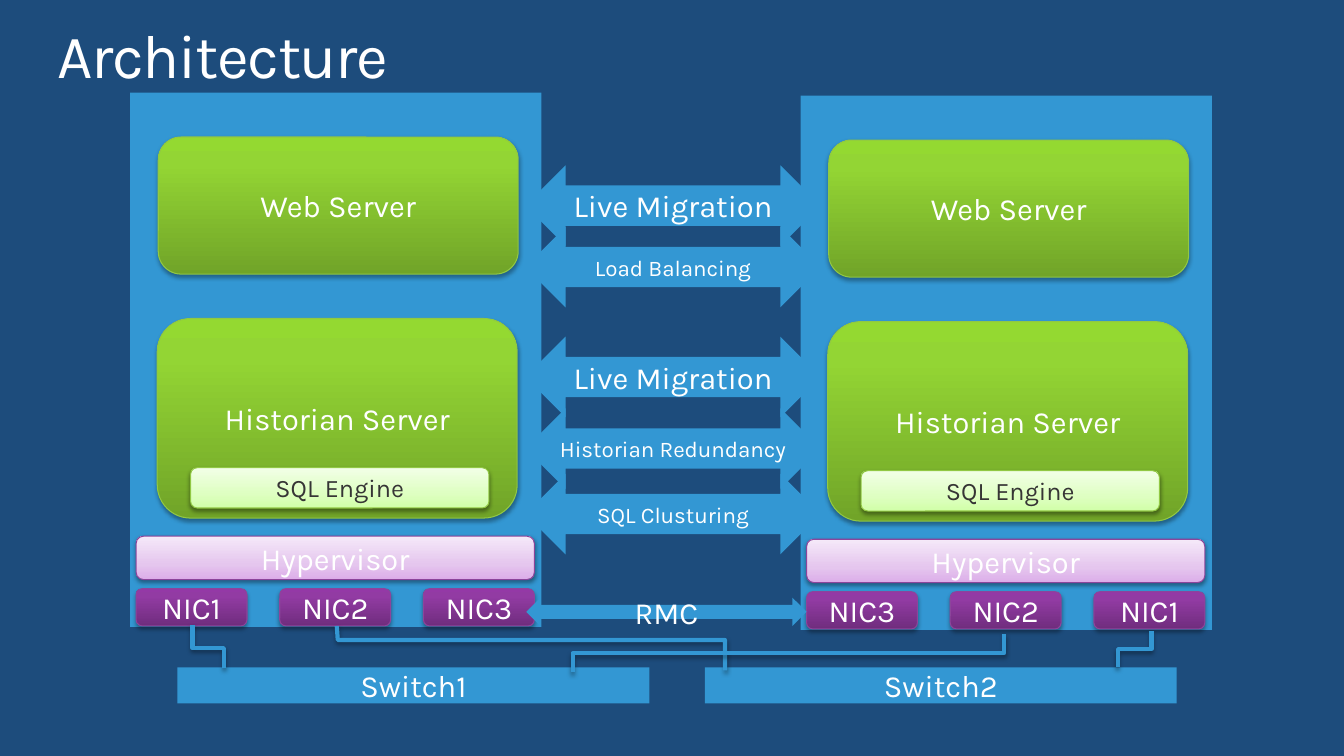
from dataclasses import dataclass

from pptx import Presentation
from pptx.dml.color import RGBColor
from pptx.enum.shapes import MSO_SHAPE as Preset
from pptx.enum.text import MSO_ANCHOR as Anchor, PP_ALIGN as Align
from pptx.oxml import parse_xml
from pptx.oxml.ns import nsdecls, qn
from pptx.util import Inches, Pt


@dataclass(frozen=True)
class Theme:
    font: str = "Karla"
    background: str = "1D4C7C"
    panel: str = "3397D3"
    white: str = "FFFFFF"
    dark: str = "363535"
    purple_line: str = "8C459B"
    green_line: str = "91C844"
    purple: tuple = ((0, "702D7E"), (80, "923BA3"), (100, "9439A6"))
    lilac: tuple = ((0, "DCADE9"), (35, "E5C6EE"), (100, "F5E9F9"))
    green: tuple = ((0, "71A428"), (80, "93D534"), (100, "94D931"))
    mint: tuple = ((0, "D1FFA8"), (35, "DEFFC1"), (100, "F2FFE7"))
    title_size: int = 44
    label_size: int = 22
    inner_size: int = 18
    small_size: int = 16


THEME = Theme()


def color(value):
    return RGBColor.from_string(value)


def write_text(shape, text, size=THEME.label_size, ink=THEME.white,
               align=Align.CENTER, anchor=Anchor.MIDDLE, margin=None,
               line_spacing=None, tracking=None):
    frame = shape.text_frame
    frame.word_wrap = True
    frame.vertical_anchor = anchor
    if margin is not None:
        frame.margin_left = frame.margin_right = Inches(margin)
        frame.margin_top = frame.margin_bottom = Inches(margin)
    para = frame.paragraphs[0]
    para.alignment = align
    if line_spacing:
        para.line_spacing = line_spacing
    span = para.add_run()
    span.text = text
    span.font.name = THEME.font
    span.font.size = Pt(size)
    span.font.color.rgb = color(ink)
    if tracking is not None:
        span.font._element.set("spc", str(tracking * 100))


def add_shadow(shape, opacity=35, distance=1.8):
    shape.shadow.inherit = False
    effects = shape.element.spPr.find(qn("a:effectLst"))
    effects.append(parse_xml(
        f'<a:outerShdw {nsdecls("a")} blurRad="{Pt(3.1)}" dist="{Pt(distance)}" '
        f'dir="5400000" rotWithShape="0"><a:srgbClr val="000000">'
        f'<a:alpha val="{opacity * 1000}"/></a:srgbClr></a:outerShdw>'))


def add_flat(page, preset, box, text=None, **text_format):
    shape = page.shapes.add_shape(preset, *map(Inches, box))
    shape.shadow.inherit = False
    shape.fill.solid()
    shape.fill.fore_color.rgb = color(THEME.panel)
    shape.line.fill.background()
    if text:
        write_text(shape, text, **text_format)


def add_glossy(page, box, text, stops, outline, shadow=(35, 1.8), **text_format):
    shape = page.shapes.add_shape(Preset.ROUNDED_RECTANGLE, *map(Inches, box))
    shape.fill.gradient()
    shape.fill.gradient_angle = 90
    stop_list = shape.element.spPr.find(qn("a:gradFill")).find(qn("a:gsLst"))
    for stop in list(stop_list):
        stop_list.remove(stop)
    for position, value in stops:
        stop_list.append(parse_xml(
            f'<a:gs {nsdecls("a")} pos="{position * 1000}">'
            f'<a:srgbClr val="{value}"/></a:gs>'))
    shape.line.color.rgb = color(outline)
    shape.line.width = Pt(0.75)
    add_shadow(shape, *shadow)
    write_text(shape, text, **text_format)


def add_title(page, box):
    title = page.shapes.add_textbox(*map(Inches, box))
    write_text(title, "Architecture", size=THEME.title_size, align=Align.LEFT,
               anchor=Anchor.TOP, margin=0, line_spacing=0.9, tracking=-1)


def add_host(page, box, cards):
    left, top, width, height = box
    add_flat(page, Preset.RECTANGLE, box)
    for index, card in enumerate(cards):
        add_glossy(page, (left + 0.06 + index * 1.425, top + 4.92, 1.1, 0.37),
                   card, THEME.purple, THEME.purple_line)
    add_glossy(page, (left + 0.06, top + 4.4, width - 0.13, 0.43), "Hypervisor",
               THEME.lilac, THEME.purple_line, shadow=(38, 1.6))
    add_glossy(page, (left + 0.27, top + 2.24, 3.57, 1.98), "Historian Server",
               THEME.green, THEME.green_line)
    add_glossy(page, (left + 0.6, top + 3.72, 2.96, 0.4), "SQL Engine",
               THEME.mint, THEME.green_line, shadow=(38, 1.6),
               size=THEME.inner_size, ink=THEME.dark)
    add_glossy(page, (left + 0.28, top + 0.44, 3.57, 1.36), "Web Server",
               THEME.green, THEME.green_line)


def add_switches(page, box):
    left, top, width, height = box
    switch_width = 4.68
    for index, name in enumerate(("Switch1", "Switch2")):
        add_flat(page, Preset.RECTANGLE,
                 (left + index * (width - switch_width), top, switch_width, height), name)


def add_links(page, box):
    left, top, width, height = box
    links = (
        (0, "Live Migration", THEME.label_size),
        (1.7, "Live Migration", THEME.label_size),
        (2.41, "Historian Redundancy", THEME.small_size),
        (3.06, "SQL Clusturing", THEME.small_size),
        (0.61, "Load Balancing", THEME.small_size),
    )
    for offset, text, size in links:
        add_flat(page, Preset.LEFT_RIGHT_ARROW, (left, top + offset, width, 0.8),
                 text, size=size)


def add_cables(page, box):
    left, top, width, height = box
    cables = (
        ((0, 0), (0, 0.23), (0.31, 0.23), (0.31, 0.43)),
        ((1.43, 0.01), (1.44, 0.15), (5.28, 0.15), (5.28, 0.45)),
        ((8.05, 0.09), (8.05, 0.28), (3.77, 0.28), (3.77, 0.47)),
        ((width, 0.06), (width, 0.24), (width - 0.33, 0.24), (width - 0.33, 0.42)),
    )
    for cable in cables:
        start, *bends = [(Inches(left + x), Inches(top + y)) for x, y in cable]
        builder = page.shapes.build_freeform(*start, scale=1.0)
        builder.add_line_segments(bends, close=False)
        wire = builder.convert_to_shape()
        wire.fill.background()
        wire.line.color.rgb = color(THEME.panel)
        wire.line.width = Pt(3)
        add_shadow(wire)


def main():
    deck = Presentation()
    deck.slide_width = Inches(13.33)
    deck.slide_height = Inches(7.5)
    page = deck.slides.add_slide(deck.slide_layouts[6])
    page.background.fill.solid()
    page.background.fill.fore_color.rgb = color(THEME.background)
    add_title(page, (0.57, 0.25, 12.2, 0.67))
    add_host(page, (1.29, 0.92, 4.08, 5.3), ("NIC1", "NIC2", "NIC3"))
    add_switches(page, (1.76, 6.62, 9.91, 0.36))
    add_host(page, (7.94, 0.95, 4.08, 5.3), ("NIC3", "NIC2", "NIC1"))
    add_links(page, (5.21, 1.64, 2.93, 3.86))
    add_cables(page, (1.91, 6.2, 9.51, 0.47))
    add_flat(page, Preset.LEFT_RIGHT_ARROW, (5.22, 5.93, 2.78, 0.28), "RMC")
    deck.save("out.pptx")


if __name__ == "__main__":
    main()
